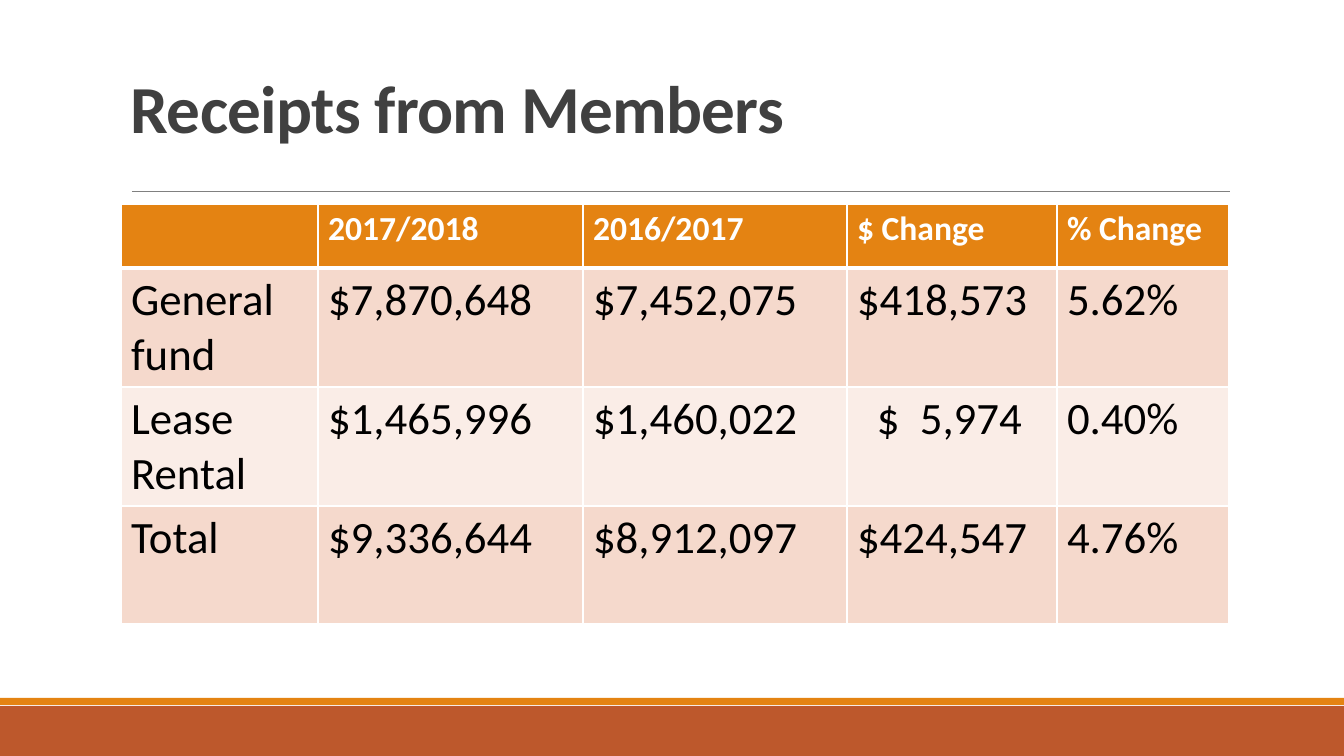
from lxml import etree
from pptx import Presentation
from pptx.dml.color import RGBColor
from pptx.enum.shapes import MSO_CONNECTOR, MSO_SHAPE
from pptx.enum.text import MSO_ANCHOR
from pptx.oxml.ns import qn
from pptx.util import Emu, Pt

RECT = MSO_SHAPE.RECTANGLE
LINE = MSO_CONNECTOR.STRAIGHT
BOTTOM = MSO_ANCHOR.BOTTOM

WHITE = RGBColor(0xFF, 0xFF, 0xFF)
BLACK = RGBColor(0, 0, 0)
DARK = RGBColor(0x40, 0x40, 0x40)
GREY = RGBColor(0x80, 0x80, 0x80)
RUST = RGBColor(0xBD, 0x58, 0x2C)
ORANGE = RGBColor(0xE4, 0x83, 0x12)
PEACH = RGBColor(0xF5, 0xD9, 0xCC)
PALE = RGBColor(0xFA, 0xED, 0xE7)

SCALE = 12192000 / 1344
COLS = [197, 265, 264, 210, 172]
ROWS = [64, 119, 119, 118]
DATA = [
    ["", "2017/2018", "2016/2017", "$ Change", "% Change"],
    ["General fund", "$7,870,648", "$7,452,075", "$418,573", "5.62%"],
    ["Lease Rental", "$1,465,996", "$1,460,022", "$  5,974", "0.40%"],
    ["Total", "$9,336,644", "$8,912,097", "$424,547", "4.76%"],
]
INDENT = {(2, 3): 30}
TITLE = {"name": "Calibri", "size": Pt(48), "bold": True}
HEAD = {"name": "Calibri", "size": Pt(24), "bold": True}
BODY = {"name": "Calibri", "size": Pt(32), "bold": False}


def px(num):
    return Emu(round(num * SCALE))


def style(font, form, color):
    for key, value in form.items():
        setattr(font, key, value)
    font.color.rgb = color


def add_bar(slide, top, height, color):
    bar = slide.shapes.add_shape(RECT, 0, px(top), px(1344), px(height))
    bar.shadow.inherit = False
    bar.fill.solid()
    bar.fill.fore_color.rgb = color
    bar.line.fill.background()


def add_rule(slide, left, right, top):
    rule = slide.shapes.add_connector(LINE, px(left), px(top), px(right), px(top))
    rule.line.color.rgb = GREY
    rule.line.width = Pt(0.5)
    etree.SubElement(rule._element.spPr, qn("a:effectLst"))


def add_title(slide, text):
    box = slide.shapes.add_textbox(px(121), px(31), px(1109), px(121))
    frame = box.text_frame
    frame.word_wrap = True
    frame.vertical_anchor = BOTTOM
    para = frame.paragraphs[0]
    para.line_spacing = 0.85
    run = para.add_run()
    run.text = text
    style(run.font, TITLE, DARK)
    run.font._element.set("spc", "-50")


def add_edge(cell, side, width):
    edge = etree.SubElement(cell._tc.get_or_add_tcPr(), qn(f"a:ln{side}"), w=str(Pt(width)))
    fill = etree.SubElement(edge, qn("a:solidFill"))
    etree.SubElement(fill, qn("a:srgbClr"), val=str(WHITE))


def fill_cell(cell, text, row):
    widths = {"L": 1, "R": 1, "T": 3 if row == 1 else 1, "B": 3 if row == 0 else 1}
    for side, width in widths.items():
        add_edge(cell, side, width)
    cell.fill.solid()
    cell.fill.fore_color.rgb = ORANGE if row == 0 else PEACH if row % 2 else PALE
    cell.text = text
    form, color = (BODY, BLACK) if row else (HEAD, WHITE)
    for run in cell.text_frame.paragraphs[0].runs:
        style(run.font, form, color)


def add_grid(slide):
    frame = slide.shapes.add_table(
        len(ROWS), len(COLS), px(121), px(204), px(sum(COLS)), px(sum(ROWS)))
    table = frame.table
    table.first_row = False
    table.horz_banding = False
    for col, width in zip(table.columns, COLS):
        col.width = px(width)
    for row, height in zip(table.rows, ROWS):
        row.height = px(height)
    for r, texts in enumerate(DATA):
        for c, text in enumerate(texts):
            fill_cell(table.cell(r, c), text, r)
    for spot, left in INDENT.items():
        table.cell(*spot).margin_left = px(left)


def main():
    deck = Presentation()
    deck.slide_width = px(1344)
    deck.slide_height = px(756)
    slide = deck.slides.add_slide(deck.slide_layouts[6])
    add_bar(slide, 706, 50, RUST)
    add_bar(slide, 698, 7, ORANGE)
    add_rule(slide, 132, 1230, 191)
    add_title(slide, "Receipts from Members")
    add_grid(slide)
    deck.save("out.pptx")


if __name__ == "__main__":
    main()
